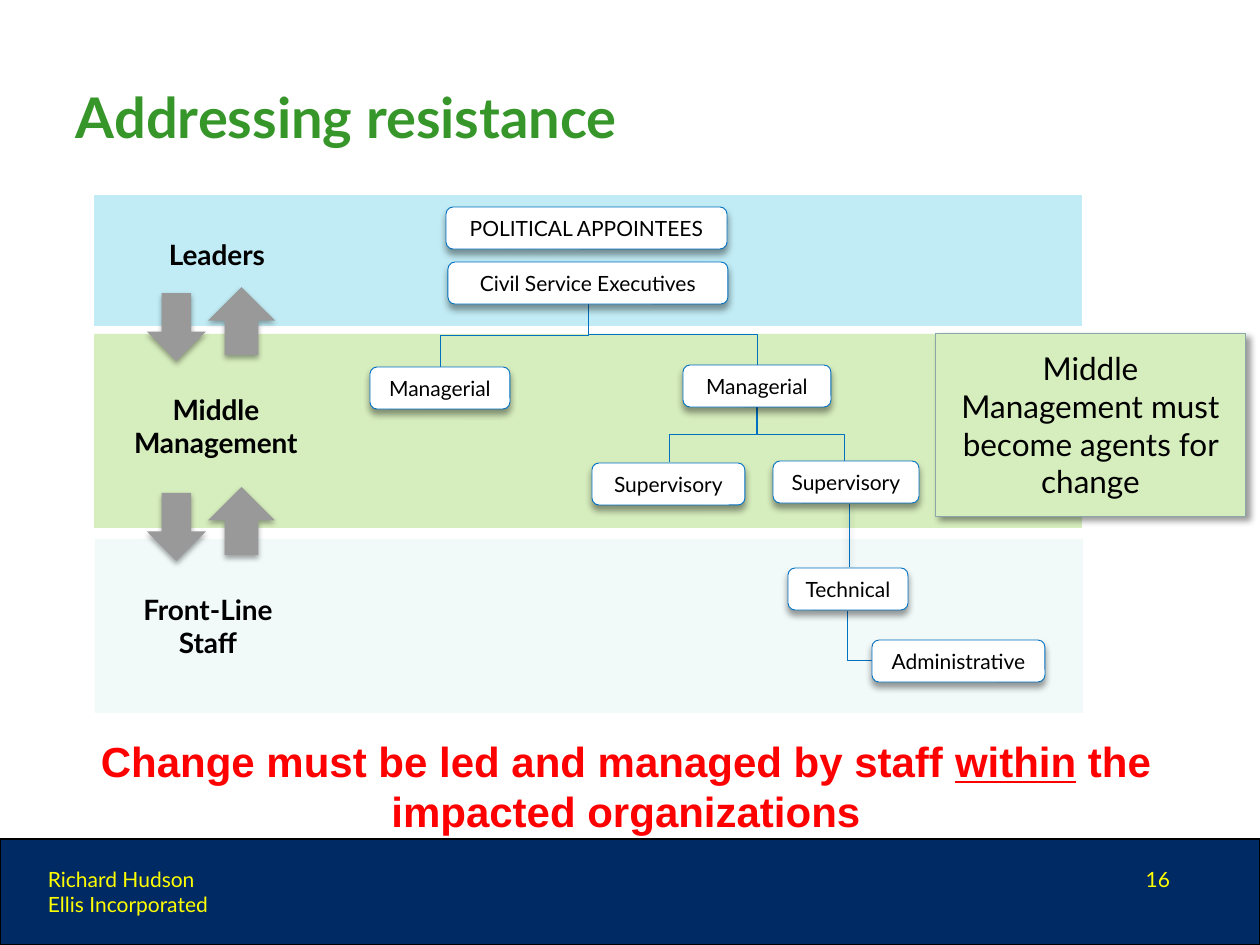
from dataclasses import dataclass
from typing import Optional

from lxml.etree import SubElement
from pptx import Presentation
from pptx.dml.color import RGBColor
from pptx.enum.shapes import MSO_CONNECTOR as Connector, MSO_SHAPE as Shape
from pptx.enum.text import MSO_ANCHOR as Anchor, PP_ALIGN as Align
from pptx.oxml.ns import qn
from pptx.util import Pt

SCALE = 914400 / 126
WHITE = RGBColor(0xFF, 0xFF, 0xFF)
BLACK = RGBColor(0x00, 0x00, 0x00)
NAVY = RGBColor(0x00, 0x2A, 0x64)
BLUE = RGBColor(0x00, 0x70, 0xC0)
SKY = RGBColor(0xC1, 0xEC, 0xF5)
LIME = RGBColor(0xD6, 0xED, 0xBD)
MIST = RGBColor(0xF1, 0xF9, 0xF9)
GRAY = RGBColor(0x99, 0x99, 0x99)
SAGE = RGBColor(0x8A, 0xA6, 0xA8)
GREEN = RGBColor(0x36, 0x96, 0x2A)
RED = RGBColor(0xFF, 0x00, 0x00)
YELLOW = RGBColor(0xFF, 0xFF, 0x00)


@dataclass(frozen=True)
class Area:
    left: int
    top: int
    width: int
    height: int


@dataclass(frozen=True)
class Shadow:
    blur: float
    distance: float
    angle: int
    opacity: int


@dataclass(frozen=True)
class Role:
    text: str
    area: Area


@dataclass(frozen=True)
class Link:
    start: tuple[int, int]
    end: tuple[int, int]
    bends: int = 2


SOFT = Shadow(4, 3, 90, 40)
DIAGONAL = Shadow(4, 3, 45, 40)
ARROW = Shadow(3.1, 1.8, 90, 35)

BANDS = [
    (MIST, Area(95, 539, 988, 174)),
    (LIME, Area(94, 334, 988, 194)),
    (SKY, Area(94, 195, 988, 131)),
]
LEVELS = [
    Role("Leaders", Area(123, 201, 188, 107)),
    Role("Middle Management", Area(110, 375, 212, 102)),
    Role("Front-Line Staff", Area(114, 578, 188, 96)),
]
ROLES = [
    Role("POLITICAL APPOINTEES", Area(446, 207, 281, 42)),
    Role("Civil Service Executives", Area(448, 262, 280, 42)),
    Role("Managerial", Area(370, 367, 140, 42)),
    Role("Managerial", Area(683, 365, 148, 42)),
    Role("Supervisory", Area(592, 463, 153, 42)),
    Role("Supervisory", Area(773, 461, 146, 42)),
    Role("Technical", Area(788, 568, 120, 42)),
    Role("Administrative", Area(872, 640, 173, 42)),
]
LINKS = [
    Link((588, 304), (440, 367)),
    Link((588, 304), (757, 366)),
    Link((757, 407), (669, 462)),
    Link((757, 407), (845, 462)),
    Link((849, 504), (849, 567), 0),
    Link((848, 611), (872, 661), 1),
]
ARROW_TOPS = [287, 487]


def px(value: float) -> int:
    return round(value * SCALE)


def place(box, area: Area) -> None:
    box.left, box.top = px(area.left), px(area.top)
    box.width, box.height = px(area.width), px(area.height)


def write(box, text, *, size=12, color=BLACK, font="Lato", bold=False, align=Align.CENTER,
          anchor=Anchor.MIDDLE, wrap=True, side=13, underlined="") -> None:
    frame = box.text_frame
    frame.word_wrap, frame.vertical_anchor = wrap, anchor
    frame.margin_left = frame.margin_right = px(side)
    for index, line in enumerate(text.split("\n")):
        para = frame.add_paragraph() if index else frame.paragraphs[0]
        para.alignment = align
        before, word, after = line.partition(underlined) if underlined else (line, "", "")
        for part in filter(None, (before, word, after)):
            span = para.add_run()
            span.text = part
            span.font.name, span.font.size, span.font.bold = font, Pt(size), bold
            span.font.color.rgb = color
            if part == underlined:
                span.font.underline = True


def add_shadow(effects, shadow: Shadow) -> None:
    outer = SubElement(effects, qn("a:outerShdw"), blurRad=str(Pt(shadow.blur)),
                       dist=str(Pt(shadow.distance)), dir=str(shadow.angle * 60000),
                       algn="ctr", rotWithShape="0")
    tint = SubElement(outer, qn("a:srgbClr"), val=str(BLACK))
    SubElement(tint, qn("a:alpha"), val=str(shadow.opacity * 1000))


def add_box(page, kind: Shape, area: Area, fill: Optional[RGBColor] = None,
            line: Optional[RGBColor] = None, weight: float = 0.5,
            shadow: Optional[Shadow] = None):
    box = page.shapes.add_shape(kind, 0, 0, 0, 0)
    place(box, area)
    if fill is None:
        box.fill.background()
    else:
        box.fill.solid()
        box.fill.fore_color.rgb = fill
    if line is None:
        box.line.fill.background()
    else:
        box.line.color.rgb = line
        box.line.width = Pt(weight)
    box.shadow.inherit = False
    if shadow:
        add_shadow(box._element.spPr.find(qn("a:effectLst")), shadow)
    return box


def add_text(page, area: Area, text: str, **style) -> None:
    box = page.shapes.add_textbox(0, 0, 0, 0)
    place(box, area)
    write(box, text, anchor=Anchor.TOP, **style)


def add_link(page, link: Link) -> None:
    (x1, y1), (x2, y2) = link.start, link.end
    kind = Connector.ELBOW if link.bends else Connector.STRAIGHT
    if link.bends:
        middle_x, middle_y = (x1 + x2) / 2, (y1 + y2) / 2
        long, wide = (y2 - y1) / 2, abs(x2 - x1) / 2
        ends = (middle_x - long, middle_y - wide, middle_x + long, middle_y + wide)
    else:
        ends = (x1, y1, x2, y2)
    connector = page.shapes.add_connector(kind, *map(px, ends))
    connector.line.color.rgb = BLUE
    connector.line.width = Pt(0.5)
    properties = connector._element.spPr
    effects = SubElement(properties, qn("a:effectLst"))
    if link.bends:
        frame = properties.find(qn("a:xfrm"))
        frame.set("rot", str((270 if x2 > x1 else 90) * 60000))
        frame.set("flipH", str(int(x2 > x1)))
        properties.find(qn("a:prstGeom")).set("prst", f"bentConnector{link.bends + 1}")
    else:
        add_shadow(effects, SOFT)


def main() -> None:
    deck = Presentation()
    deck.slide_width, deck.slide_height = px(1260), px(945)
    page = deck.slides.add_slide(deck.slide_layouts[5])
    title = page.shapes.title
    place(title, Area(63, 38, 1134, 157))
    write(title, "Addressing resistance", size=32, color=GREEN, bold=True, align=Align.LEFT)

    add_box(page, Shape.RECTANGLE, Area(0, 839, 1260, 106), NAVY, BLACK, 0.75)
    for color, area in BANDS:
        add_box(page, Shape.RECTANGLE, area, color)
    for link in LINKS:
        add_link(page, link)
    for role in ROLES:
        box = add_box(page, Shape.ROUNDED_RECTANGLE, role.area, WHITE, BLUE, shadow=SOFT)
        write(box, role.text, wrap=False)
    for level in LEVELS:
        box = add_box(page, Shape.ROUNDED_RECTANGLE, level.area)
        write(box, level.text, size=16, bold=True)
    for top in ARROW_TOPS:
        add_box(page, Shape.DOWN_ARROW, Area(147, top + 6, 59, 68), GRAY, shadow=ARROW)
        add_box(page, Shape.UP_ARROW, Area(208, top, 67, 68), GRAY, shadow=ARROW)

    callout = add_box(page, Shape.RECTANGLE, Area(935, 333, 311, 183), LIME, SAGE,
                      shadow=DIAGONAL)
    write(callout, "Middle Management must become agents for change", size=18, side=17)
    add_text(page, Area(84, 729, 1084, 115),
             "Change must be led and managed by staff within the impacted organizations",
             size=24, color=RED, font="Arial", bold=True, underlined="within")
    add_text(page, Area(35, 860, 795, 66), "Richard Hudson\nEllis Incorporated",
             color=YELLOW, align=Align.LEFT)
    add_text(page, Area(921, 860, 294, 66), "16", color=YELLOW, align=Align.RIGHT, side=45)
    deck.save("out.pptx")


if __name__ == "__main__":
    main()
